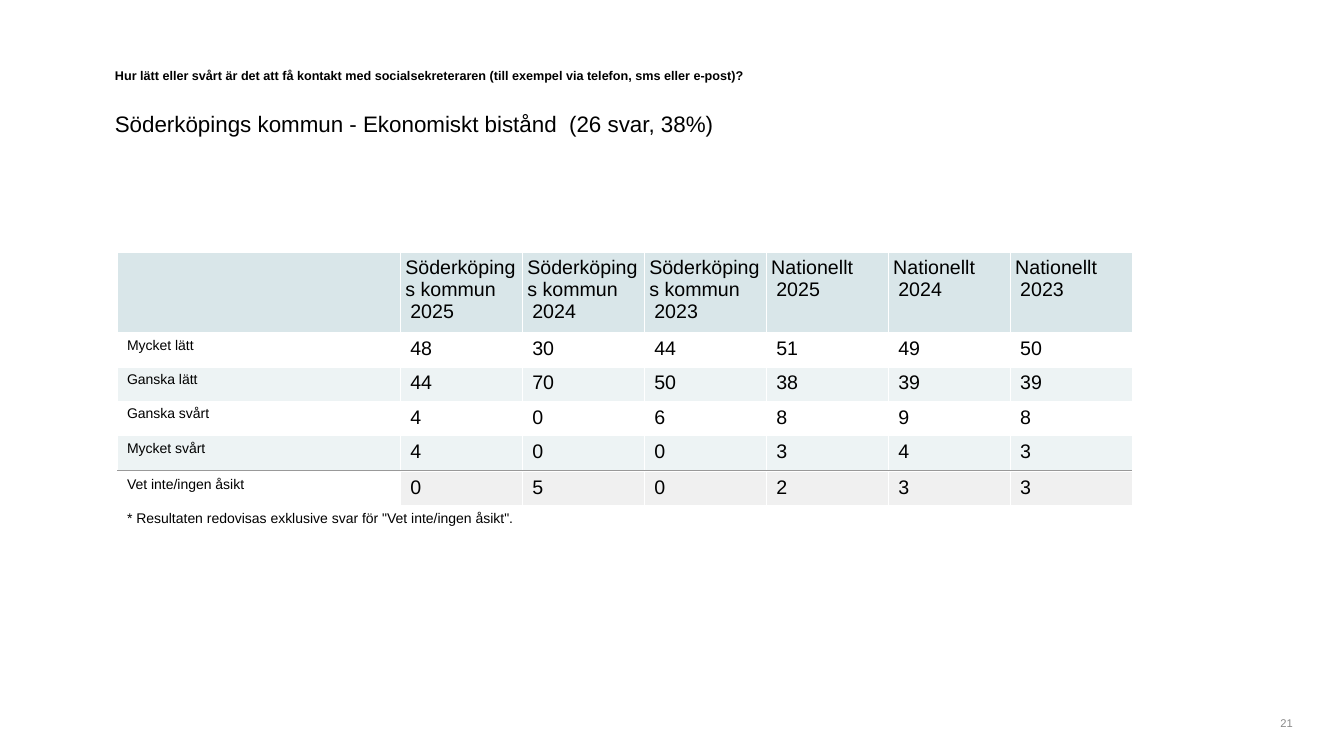
from lxml import etree
from pptx import Presentation, util as u
from pptx.dml.color import RGBColor
from pptx.enum import text
from pptx.oxml import ns


class Theme:
    font = "Arial"
    black, grey, white = "000000", "898989", "FFFFFF"
    header, band, muted, rule = "D9E6E9", "EDF3F4", "F0F0F0", "999999"
    title, subtitle, value, label, number = 9, 16, 14, 10, 8


def add_span(para, words, size, color=Theme.black, bold=False):
    span = para.add_run()
    span.text = words
    span.font.name = Theme.font
    span.font.size = u.Pt(size)
    span.font.bold = bold
    span.font.color.rgb = RGBColor.from_string(color)


def set_borders(cell, visible):
    properties = cell._tc.get_or_add_tcPr()
    for side in "LRTB":
        line = etree.SubElement(properties, ns.qn(f"a:ln{side}"), w=str(u.Pt(1)))
        if side in visible:
            fill = etree.SubElement(line, ns.qn("a:solidFill"))
            etree.SubElement(fill, ns.qn("a:srgbClr"), val=Theme.white)
        else:
            etree.SubElement(line, ns.qn("a:noFill"))


deck = Presentation()
deck.slide_width, deck.slide_height = u.Inches(13.33), u.Inches(7.5)
page = deck.slides.add_slide(deck.slide_layouts[5])

# Title and subtitle, stacked in lines of equal height
left, line_height, text_width = u.Inches(1.04), u.Inches(0.42), u.Inches(11.25)
title = page.shapes.title
title.left, title.top, title.width, title.height = left, u.Inches(0.62), text_width, line_height
subtitle = page.shapes.add_textbox(left, title.top + line_height, text_width, line_height)
headings = [
    (title, "Hur lätt eller svårt är det att få kontakt med socialsekreteraren "
            "(till exempel via telefon, sms eller e-post)?", Theme.title, True),
    (subtitle, "Söderköpings kommun - Ekonomiskt bistånd  (26 svar, 38%)", Theme.subtitle, False),
]
for box, words, size, bold in headings:
    frame = box.text_frame
    frame.word_wrap = True
    frame.auto_size = text.MSO_AUTO_SIZE.SHAPE_TO_FIT_TEXT
    frame.vertical_anchor = text.MSO_ANCHOR.TOP
    para = frame.paragraphs[0]
    para.alignment = text.PP_ALIGN.LEFT
    add_span(para, words, size, bold=bold)

# Table contents: cells, fill of the label column, fill of the values, row height
areas = ["Söderköpings kommun", "Nationellt"]
years = [2025, 2024, 2023]
columns = [f"{area}\n{year}" for area in areas for year in years]
row_height = 0.34
rows = [
    (["", *columns], Theme.header, Theme.header, 0.8),
    (["Mycket lätt", 48, 30, 44, 51, 49, 50], None, None, row_height),
    (["Ganska lätt", 44, 70, 50, 38, 39, 39], Theme.band, Theme.band, row_height),
    (["Ganska svårt", 4, 0, 6, 8, 9, 8], None, None, row_height),
    (["Mycket svårt", 4, 0, 0, 3, 4, 3], Theme.band, Theme.band, row_height),
    ([""] * 7, Theme.rule, Theme.rule, 0.02),
    (["Vet inte/ingen åsikt", 0, 5, 0, 2, 3, 3], None, Theme.muted, row_height),
    (['* Resultaten redovisas exklusive svar för "Vet inte/ingen åsikt".', *[""] * 6],
     None, None, 0.28),
]
rule_row, note_row = 5, 7
borders = {rule_row - 1: "LRT", rule_row: "B"}
widths = [2.81] + [1.21] * len(columns)

# Table
table = page.shapes.add_table(
    len(rows), len(widths), u.Inches(1.16), u.Inches(2.5),
    u.Inches(sum(widths)), u.Inches(sum(row[-1] for row in rows))).table
table.first_row = table.horz_banding = False
for column, width in zip(table.columns, widths):
    column.width = u.Inches(width)

for r, (values, label_fill, value_fill, height) in enumerate(rows):
    table.rows[r].height = u.Inches(height)
    for c, value in enumerate(values):
        cell = table.cell(r, c)
        inset = 0 if r == rule_row else u.Inches(0.05)
        cell.margin_left = cell.margin_right = cell.margin_top = cell.margin_bottom = inset
        set_borders(cell, borders.get(r, "LRTB"))
        color = value_fill if c else label_fill
        if color:
            cell.fill.solid()
            cell.fill.fore_color.rgb = RGBColor.from_string(color)
        else:
            cell.fill.background()
        para = cell.text_frame.paragraphs[0]
        if value != "":
            para._p.get_or_add_pPr().set("marL", str(u.Inches(0.05)))
            add_span(para, str(value), Theme.value if c else Theme.label)
        else:
            # Empty cells get tiny type so that the rule row stays thin
            etree.SubElement(para._p, ns.qn("a:endParaRPr"), sz="100")

for r in (rule_row, note_row):
    table.cell(r, 0).merge(table.cell(r, len(widths) - 1))

# Page number
box = page.shapes.add_textbox(u.Inches(12.5), u.Inches(7.08), line_height, u.Inches(0.21))
frame = box.text_frame
frame.word_wrap = True
frame.vertical_anchor = text.MSO_ANCHOR.BOTTOM
para = frame.paragraphs[0]
para.alignment = text.PP_ALIGN.RIGHT
add_span(para, "21", Theme.number, Theme.grey)

deck.save("out.pptx")
